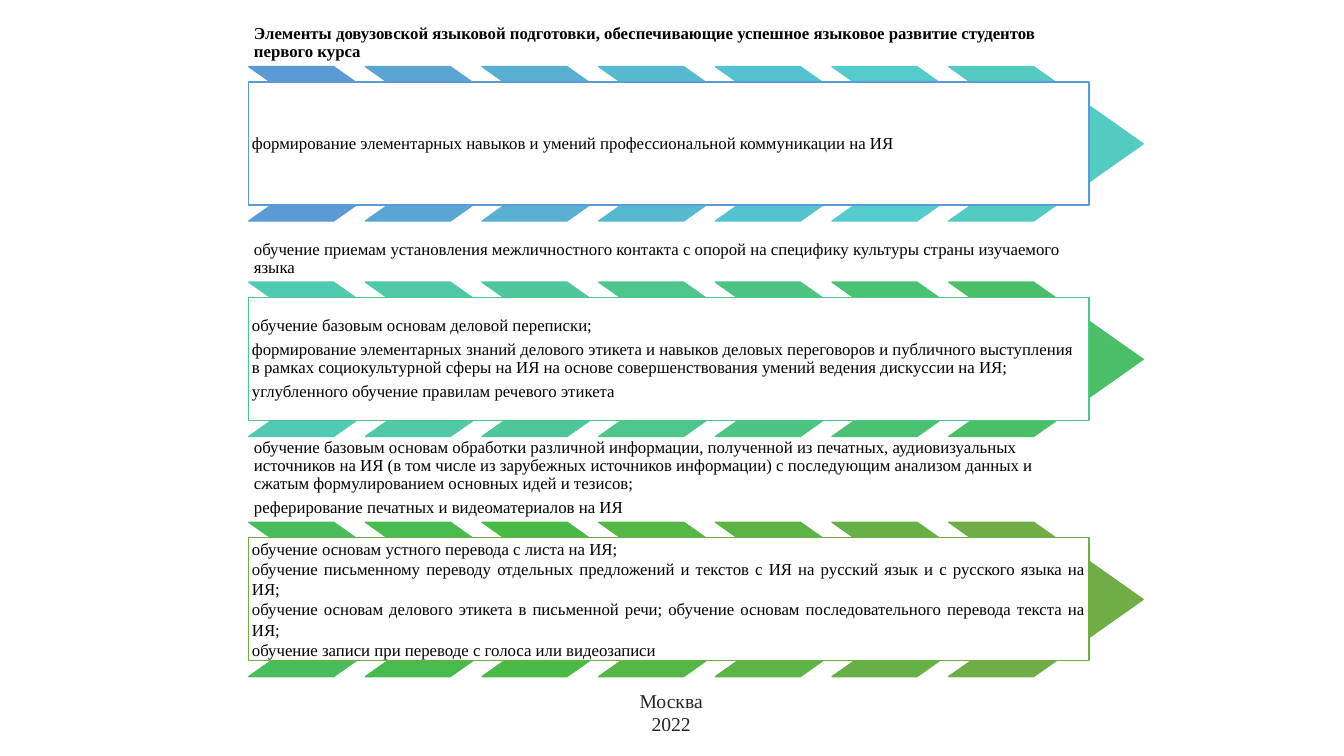
from dataclasses import dataclass

from pptx import Presentation
from pptx.dml.color import RGBColor
from pptx.enum.shapes import MSO_SHAPE
from pptx.enum.text import MSO_ANCHOR, MSO_AUTO_SIZE, PP_ALIGN
from pptx.util import Cm, Pt


@dataclass(frozen=True)
class Theme:
    font: str = "Times New Roman"
    text: str = "000000"
    footer: str = "262626"
    paper: str = "FFFFFF"
    text_size: int = 12
    footer_size: int = 14


theme = Theme()

# Each band: top and height of caption, caption, frame colour, chevron colours, frame text
bands = [
    dict(
        top=1.68, caption_height=1.9, frame_color="5B9BD5", justified=False,
        chevrons="5B9BD5 5AA5D3 58AFD2 57B9D0 55C3CF 54CCCD 53CBC1",
        caption=["Элементы довузовской языковой подготовки, обеспечивающие успешное "
                 "языковое развитие студентов первого курса"],
        body=["формирование элементарных навыков и умений профессиональной коммуникации на ИЯ"],
    ),
    dict(
        top=7.11, caption_height=1.27, frame_color="4DC58D", justified=False,
        chevrons="51CAB4 50C8A7 4FC69A 4DC58D 4CC381 4BC174 4ABF68",
        caption=["обучение приемам установления межличностного контакта с опорой на "
                 "специфику культуры страны изучаемого языка"],
        body=["обучение базовым основам деловой переписки;",
              "формирование элементарных знаний делового этикета и навыков деловых "
              "переговоров и публичного выступления в рамках социокультурной сферы на ИЯ "
              "на основе совершенствования умений ведения дискуссии на ИЯ;",
              "углубленного обучение правилам речевого этикета"],
    ),
    dict(
        top=13.16, caption_height=1.9, frame_color="70AD47", justified=True,
        chevrons="49BD5B 48BB4F 4ABA46 54B746 5EB347 67B047 70AD47",
        caption=["обучение базовым основам обработки различной информации, полученной из "
                 "печатных, аудиовизуальных источников на ИЯ (в том числе из зарубежных "
                 "источников информации) с последующим анализом данных и сжатым "
                 "формулированием основных идей и тезисов;",
                 "реферирование печатных и видеоматериалов на ИЯ"],
        body=["обучение основам устного перевода с листа на ИЯ;",
              "обучение письменному переводу отдельных предложений и текстов с ИЯ на "
              "русский язык и с русского языка на ИЯ;",
              "обучение основам делового этикета в письменной речи; обучение основам "
              "последовательного перевода текста на ИЯ;",
              "обучение записи при переводе с голоса или видеозаписи"],
    ),
]
left = 6.27
chevron_step = 2.94


def write(shape, lines, anchor, inset, alignment=PP_ALIGN.LEFT, bold=False,
          size=theme.text_size, color=theme.text, line_spacing=0.9, space_after=4.2):
    frame = shape.text_frame
    frame.word_wrap = True
    frame.auto_size = MSO_AUTO_SIZE.NONE
    frame.vertical_anchor = anchor
    frame.margin_left = frame.margin_right = Cm(inset)
    frame.margin_top = frame.margin_bottom = Cm(inset)
    for index, line in enumerate(lines):
        paragraph = frame.add_paragraph() if index else frame.paragraphs[0]
        paragraph.alignment = alignment
        paragraph.line_spacing = line_spacing
        paragraph.space_before = Pt(0)
        paragraph.space_after = Pt(space_after)
        run = paragraph.add_run()
        run.text = line
        run.font.name = theme.font
        run.font.size = Pt(size)
        run.font.bold = bold
        run.font.color.rgb = RGBColor.from_string(color)


def add_filled(kind, x, y, width, height, fill, line):
    shape = slide.shapes.add_shape(kind, Cm(x), Cm(y), Cm(width), Cm(height))
    shape.shadow.inherit = False
    shape.fill.solid()
    shape.fill.fore_color.rgb = RGBColor.from_string(fill)
    shape.line.color.rgb = RGBColor.from_string(line)
    shape.line.width = Pt(1)
    return shape


presentation = Presentation()
presentation.slide_width = Cm(33.87)
presentation.slide_height = Cm(19.05)
slide = presentation.slides.add_slide(presentation.slide_layouts[5])

for index, band in enumerate(bands):
    # Caption above the band; the first one is the slide title
    caption = slide.shapes.add_textbox(0, 0, 0, 0) if index else slide.shapes.title
    caption.left, caption.top = Cm(left), Cm(band["top"] - band["caption_height"])
    caption.width, caption.height = Cm(20.93), Cm(band["caption_height"])
    write(caption, band["caption"], MSO_ANCHOR.BOTTOM, 0.13, bold=index == 0)

    # Row of chevrons
    for position, color in enumerate(band["chevrons"].split()):
        chevron = add_filled(MSO_SHAPE.CHEVRON, left + position * chevron_step,
                             band["top"], 4.9, 3.89, color, color)
        chevron.adjustments[0] = 0.71

    # Framed text over the chevrons
    frame_box = add_filled(MSO_SHAPE.RECTANGLE, left, band["top"] + 0.39, 21.18, 3.1,
                           theme.paper, band["frame_color"])
    if band["justified"]:
        write(frame_box, band["body"], MSO_ANCHOR.MIDDLE, 0.08, PP_ALIGN.JUSTIFY,
              line_spacing=1.0, space_after=0)
    else:
        write(frame_box, band["body"], MSO_ANCHOR.MIDDLE, 0.08)

# City and year
footer = slide.shapes.add_textbox(Cm(15.29), Cm(17.22), Cm(3.25), Cm(1.45))
write(footer, ["Москва", "2022"], MSO_ANCHOR.TOP, 0.13, PP_ALIGN.CENTER,
      size=theme.footer_size, color=theme.footer, line_spacing=1.0, space_after=0)

presentation.save("out.pptx")
